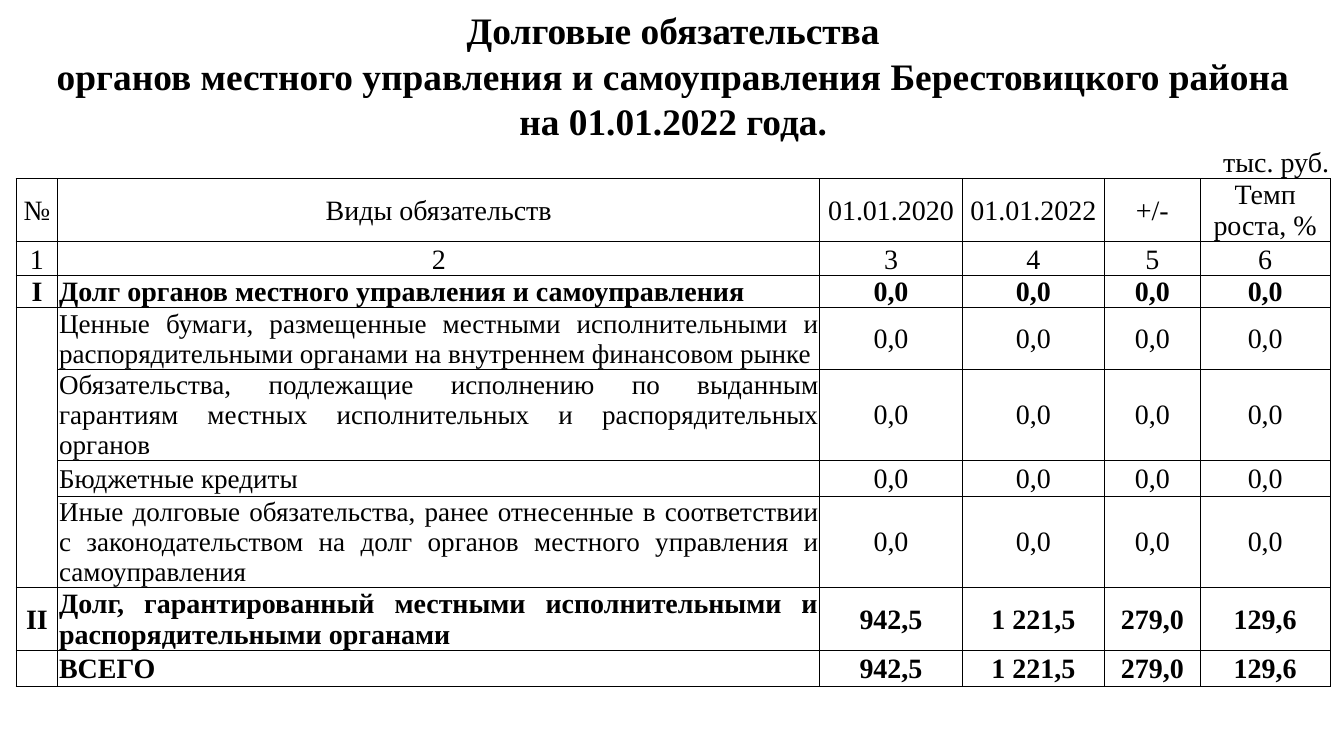
from lxml.etree import SubElement
from pptx import Presentation
from pptx.dml.color import RGBColor
from pptx.enum.text import MSO_ANCHOR as ANCHOR, PP_ALIGN as ALIGN
from pptx.oxml.ns import qn
from pptx.util import Inches, Pt

BLACK = RGBColor(0, 0, 0)
WHITE = RGBColor(255, 255, 255)
FONT = "Times New Roman"
BODY, NOTE, TITLE = 15, 14.5, 20

COL_WIDTHS = [0.31, 5.67, 1.06, 1.06, 0.71, 0.97]
ROW_HEIGHTS = [0.34, 0.34, 0.34, 0.26, 0.47, 0.25, 0.24, 0.45, 0.68, 0.24, 0.68, 0.45, 0.26]
HEADINGS = [
    "Долговые обязательства",
    "органов местного управления и самоуправления Берестовицкого района",
    "на 01.01.2022 года.",
    "тыс. руб.",
]
ZEROS = ["0,0"] * 4
TOTALS = ["942,5", "1 221,5", "279,0", "129,6"]
ROWS = [
    ["№", "Виды обязательств", "01.01.2020", "01.01.2022", "+/-", "Темп\nроста, %"],
    ["1", "2", "3", "4", "5", "6"],
    ["I", "Долг органов местного управления и самоуправления", *ZEROS],
    ["", "Ценные бумаги, размещенные местными исполнительными и "
         "распорядительными органами на внутреннем финансовом рынке", *ZEROS],
    ["", "Обязательства, подлежащие исполнению по выданным гарантиям "
         "местных исполнительных и распорядительных органов", *ZEROS],
    ["", "Бюджетные кредиты", *ZEROS],
    ["", "Иные долговые обязательства, ранее отнесенные в соответствии с "
         "законодательством на долг органов местного управления и самоуправления", *ZEROS],
    ["II", "Долг, гарантированный местными исполнительными и "
           "распорядительными органами", *TOTALS],
    ["", "ВСЕГО", *TOTALS],
]
HEAD_ROW = len(HEADINGS)
NUMBER_ROW = HEAD_ROW + 1
TOTAL_ROW = len(ROW_HEIGHTS) - 1
BOLD_ROWS = {6, 11, TOTAL_ROW}
GROUP_FIRST, GROUP_LAST = 7, 10


def fill_cell(cell, text, size, bold, align, anchor, filled):
    if filled:
        cell.fill.solid()
        cell.fill.fore_color.rgb = WHITE
    else:
        cell.fill.background()
    margins = {"margin_left": 0.01, "margin_top": 0.01, "margin_right": 0.01, "margin_bottom": 0}
    for name, value in margins.items():
        setattr(cell, name, Inches(value))
    cell.vertical_anchor = anchor
    tf = cell.text_frame
    tf.text = text
    for p in tf.paragraphs:
        p.alignment = align
        if not p.runs:
            SubElement(p._p, qn("a:endParaRPr"), sz=str(size * 100))
        for r in p.runs:
            for name, value in {"name": FONT, "size": Pt(size), "bold": bold}.items():
                setattr(r.font, name, value)
            r.font.color.rgb = BLACK


def set_borders(cell, sides):
    tcPr = cell._tc.get_or_add_tcPr()
    for i, side in enumerate("LRTB"):
        ln = SubElement(tcPr, qn(f"a:ln{side}"), w=str(Pt(0.5)))
        if side in sides:
            color = SubElement(SubElement(ln, qn("a:solidFill")), qn("a:srgbClr"))
            color.set("val", str(BLACK))
        else:
            SubElement(ln, qn("a:noFill"))
        tcPr.insert(i, ln)


prs = Presentation()
prs.slide_width = Inches(10)
prs.slide_height = Inches(10 * 9 / 16)
s = prs.slides.add_slide(prs.slide_layouts[6])

frame = s.shapes.add_table(
    len(ROW_HEIGHTS), len(COL_WIDTHS), Inches(0.12), Inches(0.05),
    Inches(sum(COL_WIDTHS)), Inches(sum(ROW_HEIGHTS)))
table = frame.table
table.first_row = table.horz_banding = False
for col, width in zip(table.columns, COL_WIDTHS):
    col.width = Inches(width)
for row, height in zip(table.rows, ROW_HEIGHTS):
    row.height = Inches(height)

for i, text in enumerate(HEADINGS):
    is_unit = i == HEAD_ROW - 1
    table.cell(i, 0).merge(table.cell(i, len(COL_WIDTHS) - 1))
    fill_cell(table.cell(i, 0), text, BODY if is_unit else TITLE, not is_unit,
              ALIGN.RIGHT if is_unit else ALIGN.CENTER, ANCHOR.BOTTOM, i == HEAD_ROW - 2)
    for cell in table.rows[i].cells:
        set_borders(cell, "B" if is_unit else "")

for i, texts in enumerate(ROWS, HEAD_ROW):
    in_group = GROUP_FIRST <= i <= GROUP_LAST
    label_align = ALIGN.LEFT if i == TOTAL_ROW else ALIGN.JUSTIFY
    for j, text in enumerate(texts):
        is_label = j == 1 and i > NUMBER_ROW
        fill_cell(table.cell(i, j), text,
                  NOTE if is_label and in_group else BODY, i in BOLD_ROWS,
                  label_align if is_label else ALIGN.CENTER,
                  ANCHOR.BOTTOM if i == NUMBER_ROW else ANCHOR.MIDDLE,
                  j > 1 and i > NUMBER_ROW)
        sides = "LRTB"
        if j == 0 and in_group:
            sides = "LR" + "T" * (i == GROUP_FIRST) + "B" * (i == GROUP_LAST)
        set_borders(table.cell(i, j), sides)

prs.save("out.pptx")
